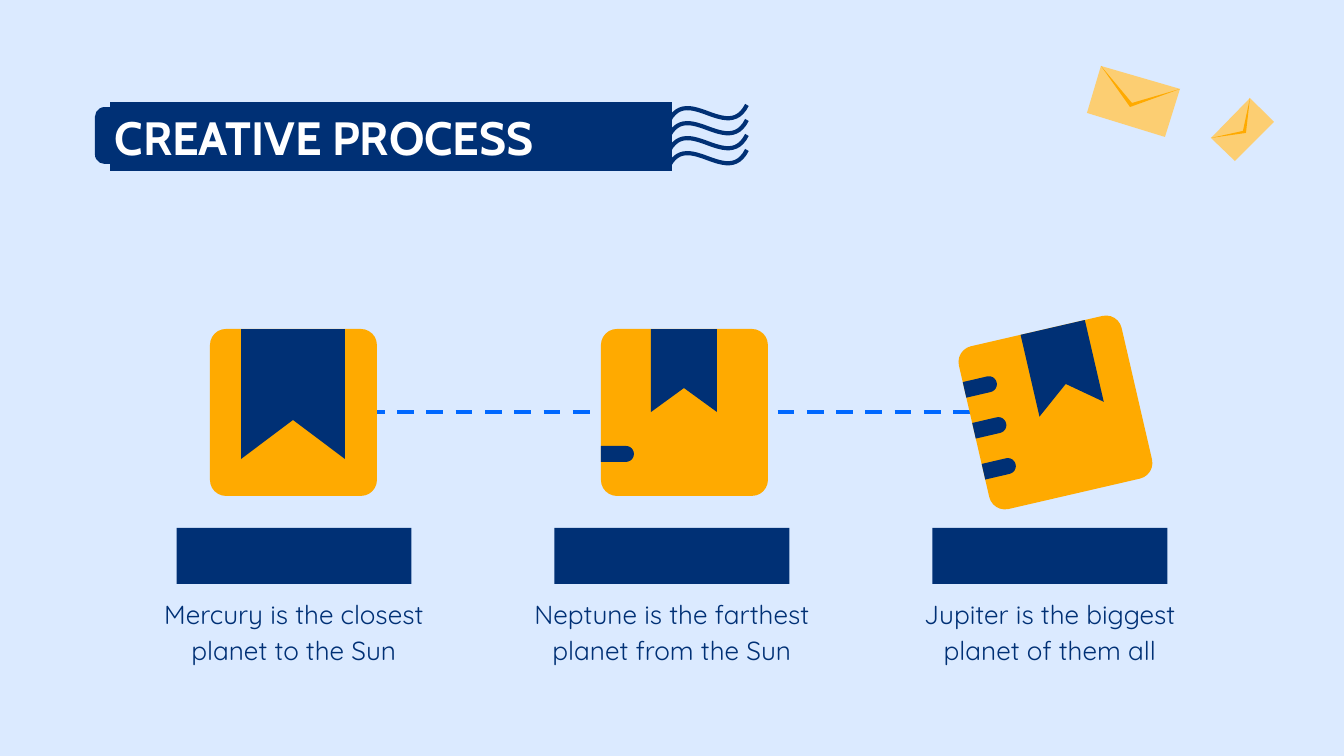
"""Builds a creative process slide with three parcels joined by a dashed line."""
import math

import lxml.etree
import pptx
import pptx.dml.color
import pptx.enum.dml
import pptx.enum.shapes
import pptx.enum.text
import pptx.oxml.ns
import pptx.util

EMU_PER_PX = 914400 / 134.4
WIDTH, HEIGHT = 1344, 756
NAVY, AMBER, PALE_AMBER = "003075", "FFAA00", "FCCE72"
BLUE, SKY, WHITE = "0068FF", "DBEAFF", "FFFFFF"

TITLE = "CREATIVE PROCESS"
STEPS = [
    {"caption": "Mercury is the closest planet to the Sun", "parcel_left": 210,
     "angle": 0, "ribbon": (31, 104, 130, 91), "slots": []},
    {"caption": "Neptune is the farthest planet from the Sun", "parcel_left": 601,
     "angle": 0, "ribbon": (50, 66, 83, 59), "slots": [117]},
    {"caption": "Jupiter is the biggest planet of them all", "parcel_left": 972,
     "angle": -13, "ribbon": (67, 66, 84, 58), "slots": [33, 75, 117]},
]
ENVELOPES = [
    {"paper": [(1180, 89), (1165, 137), (1087, 113), (1101, 66)],
     "flap": [(1180, 89), (1130, 107), (1101, 66), (1132, 103)]},
    {"paper": [(1250, 98), (1274, 122), (1235, 161), (1211, 138)],
     "flap": [(1250, 98), (1246, 133), (1211, 138), (1243, 131)]},
]
WAVE = [(669, 121), (688, 84), (728, 143), (747, 105)]
WAVE_COUNT, WAVE_GAP = 4, 15
PARCEL_TOP, PARCEL_SIZE, PARCEL_RADIUS = 329, 167, 16
SLOT_LENGTH, SLOT_RADIUS = 33, 8
FIRST_CENTER, STEP_GAP = 294, 378
BAR_TOP, BAR_WIDTH, BAR_HEIGHT = 528, 235, 56
CAPTION_TOP, CAPTION_WIDTH, CAPTION_HEIGHT = 581, 312, 89

MARGINS = {"margin_left": 13, "margin_right": 13, "margin_top": 13, "margin_bottom": 13}
TITLE_FORMAT = {
    "margins": {**MARGINS, "margin_left": 5},
    "frame": {"vertical_anchor": pptx.enum.text.MSO_ANCHOR.MIDDLE},
    "paragraph": {"alignment": pptx.enum.text.PP_ALIGN.LEFT},
    "font": {"name": "Cabin", "size": pptx.util.Pt(25), "bold": True},
    "color": WHITE,
}
CAPTION_FORMAT = {
    "margins": MARGINS,
    "frame": {"vertical_anchor": pptx.enum.text.MSO_ANCHOR.TOP},
    "paragraph": {"alignment": pptx.enum.text.PP_ALIGN.CENTER, "line_spacing": 1.15,
                  "space_before": pptx.util.Pt(0), "space_after": pptx.util.Pt(16)},
    "font": {"name": "Quicksand", "size": pptx.util.Pt(14), "bold": False},
    "color": NAVY,
}


def px(length):
    return pptx.util.Emu(round(length * EMU_PER_PX))


def color(value):
    return pptx.dml.color.RGBColor.from_string(value)


def set_attributes(target, values):
    for name, value in values.items():
        setattr(target, name, value)


def set_fill(shape, value):
    shape.fill.solid()
    shape.fill.fore_color.rgb = color(value)


def place(shape, left, top, width, height):
    set_attributes(shape, {"left": px(left), "top": px(top),
                           "width": px(width), "height": px(height)})


def add_preset(slide, kind, left, top, width, height, fill, rotation=0):
    shape = slide.shapes.add_shape(kind, px(left), px(top), px(width), px(height))
    set_fill(shape, fill)
    shape.line.fill.background()
    shape.shadow.inherit = False
    shape.rotation = rotation
    return shape


def add_outline(slide, points, fill=None, line=None):
    points = [(px(x), px(y)) for x, y in points]
    builder = slide.shapes.build_freeform(*points[0], scale=1.0)
    builder.add_line_segments(points[1:], close=fill is not None)
    shape = builder.convert_to_shape()
    shape.shadow.inherit = False
    if fill:
        set_fill(shape, fill)
        shape.line.fill.background()
    else:
        shape.fill.background()
        shape.line.color.rgb = color(line)
        shape.line.width = pptx.util.Pt(2.25)


def bezier(controls, count=24):
    weights = (1, 3, 3, 1)
    for step in range(count + 1):
        t = step / count
        yield tuple(sum(weights[i] * t ** i * (1 - t) ** (3 - i) * controls[i][axis]
                        for i in range(4)) for axis in (0, 1))


def fill_text(placeholder, text, style):
    frame = placeholder.text_frame
    frame.text = text
    frame.word_wrap = True
    frame.auto_size = pptx.enum.text.MSO_AUTO_SIZE.NONE
    set_attributes(frame, {name: px(value) for name, value in style["margins"].items()})
    set_attributes(frame, style["frame"])
    paragraph = frame.paragraphs[0]
    set_attributes(paragraph, style["paragraph"])
    font = paragraph.runs[0].font
    set_attributes(font, style["font"])
    font.color.rgb = color(style["color"])
    properties = paragraph.runs[0].font._element.getparent().getparent().get_or_add_pPr()
    properties.set("marL", "0")
    properties.set("indent", "0")
    lxml.etree.SubElement(properties, pptx.oxml.ns.qn("a:buNone"))


def add_title(slide):
    tab = add_preset(slide, pptx.enum.shapes.MSO_SHAPE.ROUND_2_SAME_RECTANGLE,
                     101, 101, 57, 69, NAVY, 270)
    tab.adjustments[0] = 0.17
    for index in range(WAVE_COUNT):
        controls = [(x, y + index * WAVE_GAP) for x, y in WAVE]
        add_outline(slide, list(bezier(controls)), line=NAVY)
    title = slide.shapes.title
    place(title, 110, 102, 562, 69)
    set_fill(title, NAVY)
    fill_text(title, TITLE, TITLE_FORMAT)
    slide.shapes.element.append(title.element)


def add_dashed_line(slide):
    line = slide.shapes.add_connector(pptx.enum.shapes.MSO_CONNECTOR.STRAIGHT,
                                      px(368), px(412), px(1015), px(412))
    line.line.color.rgb = color(BLUE)
    line.line.width = pptx.util.Pt(2.25)
    line.line.dash_style = pptx.enum.dml.MSO_LINE.DASH
    lxml.etree.SubElement(line.element.spPr, pptx.oxml.ns.qn("a:effectLst"))


def add_parcel(slide, step):
    left, angle = step["parcel_left"], math.radians(step["angle"])
    half = PARCEL_SIZE / 2

    def turned(points):
        return [(left + half + (x - half) * math.cos(angle) - (y - half) * math.sin(angle),
                 PARCEL_TOP + half + (x - half) * math.sin(angle) + (y - half) * math.cos(angle))
                for x, y in points]

    box = add_preset(slide, pptx.enum.shapes.MSO_SHAPE.ROUNDED_RECTANGLE, left, PARCEL_TOP,
                     PARCEL_SIZE, PARCEL_SIZE, AMBER, step["angle"])
    box.adjustments[0] = PARCEL_RADIUS / PARCEL_SIZE
    start, width, depth, notch = step["ribbon"]
    end = start + width
    add_outline(slide, turned([(start, 0), (end, 0), (end, depth),
                               (start + width / 2, notch), (start, depth)]), NAVY)
    for top in step["slots"]:
        arc = [(SLOT_LENGTH - SLOT_RADIUS + SLOT_RADIUS * math.cos(math.radians(degree)),
                top + SLOT_RADIUS + SLOT_RADIUS * math.sin(math.radians(degree)))
               for degree in range(-90, 91, 15)]
        add_outline(slide, turned([(0, top), *arc, (0, top + 2 * SLOT_RADIUS)]), NAVY)


def main():
    presentation = pptx.Presentation()
    presentation.slide_width, presentation.slide_height = px(WIDTH), px(HEIGHT)
    slide = presentation.slides.add_slide(presentation.slide_layouts[4])
    set_fill(slide.background, SKY)
    _, *captions, spare = list(slide.placeholders)
    spare.element.getparent().remove(spare.element)

    add_title(slide)
    for envelope in ENVELOPES:
        add_outline(slide, envelope["paper"], PALE_AMBER)
        add_outline(slide, envelope["flap"], AMBER)
    add_dashed_line(slide)
    for index, (step, caption) in enumerate(zip(STEPS, captions)):
        center = FIRST_CENTER + index * STEP_GAP
        add_parcel(slide, step)
        add_preset(slide, pptx.enum.shapes.MSO_SHAPE.RECTANGLE, center - BAR_WIDTH / 2,
                   BAR_TOP, BAR_WIDTH, BAR_HEIGHT, NAVY)
        place(caption, center - CAPTION_WIDTH / 2, CAPTION_TOP, CAPTION_WIDTH, CAPTION_HEIGHT)
        fill_text(caption, step["caption"], CAPTION_FORMAT)
        slide.shapes.element.append(caption.element)
    presentation.save("out.pptx")


if __name__ == "__main__":
    main()
